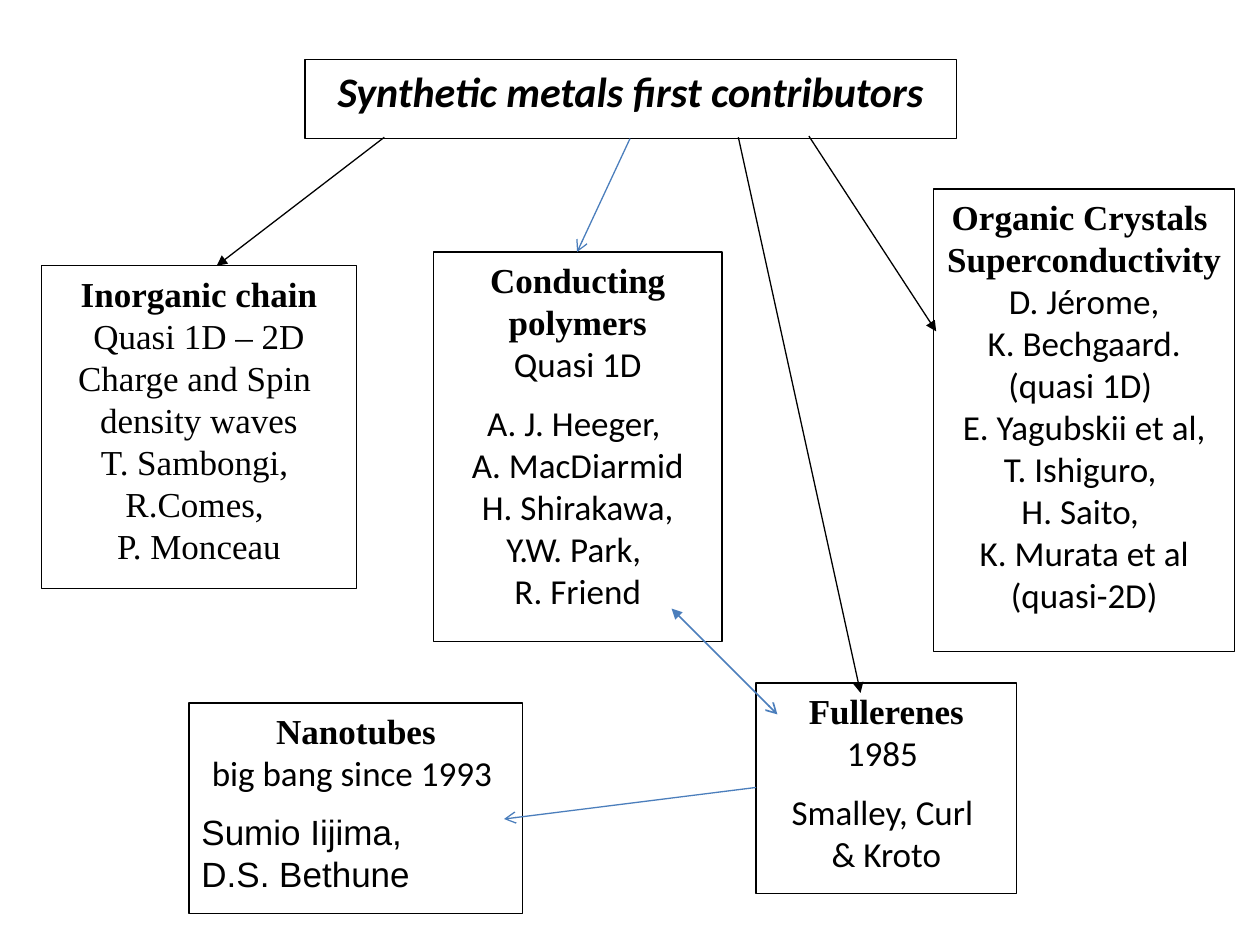
from lxml.etree import SubElement
from pptx import Presentation
from pptx.dml.color import RGBColor
from pptx.enum.shapes import MSO_CONNECTOR, MSO_SHAPE
from pptx.enum.text import MSO_ANCHOR, PP_ALIGN
from pptx.oxml.ns import qn
from pptx.util import Inches, Pt

prs = Presentation()
prs.slide_width, prs.slide_height = Inches(10), Inches(7.5)
s = prs.slides.add_slide(prs.slide_layouts[6])

BLACK, BLUE, WHITE = "000000", "4B7EBC", "FFFFFF"
rgb = RGBColor.from_string


def share(*pcts):
    """Turn alternating horizontal and vertical percentages into slide lengths."""
    sides = (prs.slide_width, prs.slide_height)
    return [int(sides[i % 2] * pct / 100) for i, pct in enumerate(pcts)]


# style: font, size, bold, italic, alignment
C, L = PP_ALIGN.CENTER, PP_ALIGN.LEFT
TITLE = ("Calibri", 24, True, True, C)
HEAD = ("Times New Roman", 20, True, False, C)
SERIF = ("Times New Roman", 20, False, False, C)
BODY = ("Calibri", 20, False, False, C)
ARIAL = ("Arial", 20, False, False, L)

# left, top, width, height in percent; paragraphs as style, space after, text
boxes = [
    ((24.2, 6.27, 51.7, 8.4), [
        (TITLE, 10, "Synthetic metals first contributors")]),
    ((34.4, 26.67, 22.9, 41.2), [
        (HEAD, 0, "Conducting polymers"),
        (BODY, 10, "Quasi 1D"),
        (BODY, 10, "A. J. Heeger, \nA. MacDiarmid\nH. Shirakawa,\nY.W. Park, \nR. Friend")]),
    ((3.3, 28.13, 25, 34.13), [
        (HEAD, 0, "Inorganic chain"),
        (SERIF, 0, "Quasi 1D – 2D"),
        (SERIF, 0, "Charge and Spin \ndensity waves"),
        (SERIF, 0, "T. Sambongi, "),
        (SERIF, 0, "R.Comes, "),
        (SERIF, 0, "P. Monceau")]),
    ((74.1, 20, 23.9, 48.93), [
        (HEAD, 0, "Organic Crystals "),
        (HEAD, 0, "Superconductivity"),
        (BODY, 0, "D. Jérome,"),
        (BODY, 0, "K. Bechgaard.\n(quasi 1D) \nE. Yagubskii et al,\n"
                  "T. Ishiguro, \nH. Saito, \nK. Murata et al"),
        (BODY, 0, "(quasi-2D)")]),
    ((60, 72.27, 20.7, 22.27), [
        (HEAD, 0, "Fullerenes"),
        (BODY, 10, "1985 "),
        (BODY, 10, "Smalley, Curl \n& Kroto")]),
    ((15, 74.4, 26.5, 22.27), [
        (HEAD, 0, "Nanotubes"),
        (BODY, 10, "big bang since 1993 "),
        (ARIAL, 0, "Sumio Iijima,"),
        (ARIAL, 0, "D.S. Bethune")]),
]

for place, paragraphs in boxes:
    sp = s.shapes.add_shape(MSO_SHAPE.RECTANGLE, *share(*place))
    sp.shadow.inherit = False
    sp.fill.solid()
    sp.fill.fore_color.rgb = rgb(WHITE)
    sp.line.color.rgb = rgb(BLACK)
    sp.line.width = Pt(0.75)
    tf = sp.text_frame
    tf.word_wrap = True
    tf.vertical_anchor = MSO_ANCHOR.TOP
    for i, (style, after, text) in enumerate(paragraphs):
        font, size, bold, italic, align = style
        p = tf.add_paragraph() if i else tf.paragraphs[0]
        p.alignment = align
        p.space_after = Pt(after)
        for j, line in enumerate(text.split("\n")):
            if j:
                p.add_line_break()
            r = p.add_run()
            r.text = line
            r.font.name, r.font.size = font, Pt(size)
            r.font.bold, r.font.italic = bold, italic
            r.font.color.rgb = rgb(BLACK)

# from and to in percent, colour, width, head, tail
arrows = [
    ((30.5, 14.53, 17.2, 28.13), BLACK, 0.75, None, "triangle"),
    ((58.6, 14.53, 68.3, 73.33), BLACK, 0.75, None, "triangle"),
    ((64.2, 14.4, 74.3, 35.07), BLACK, 0.75, None, "triangle"),
    ((50, 14.67, 45.8, 26.67), BLUE, 0.75, None, "arrow"),
    ((60, 83.33, 40, 86.67), BLUE, 0.75, None, "arrow"),
    ((53.3, 64.4, 61.7, 75.6), BLUE, 1, "triangle", "arrow"),
]

for ends, color, width, head, tail in arrows:
    arrow = s.shapes.add_connector(MSO_CONNECTOR.STRAIGHT, *share(*ends))
    arrow.line.color.rgb = rgb(color)
    arrow.line.width = Pt(width)
    ln = arrow.line._get_or_add_ln()
    for tag, kind in (("a:headEnd", head), ("a:tailEnd", tail)):
        if kind:
            SubElement(ln, qn(tag), type=kind)
    SubElement(arrow._element.spPr, qn("a:effectLst"))

prs.save("out.pptx")
